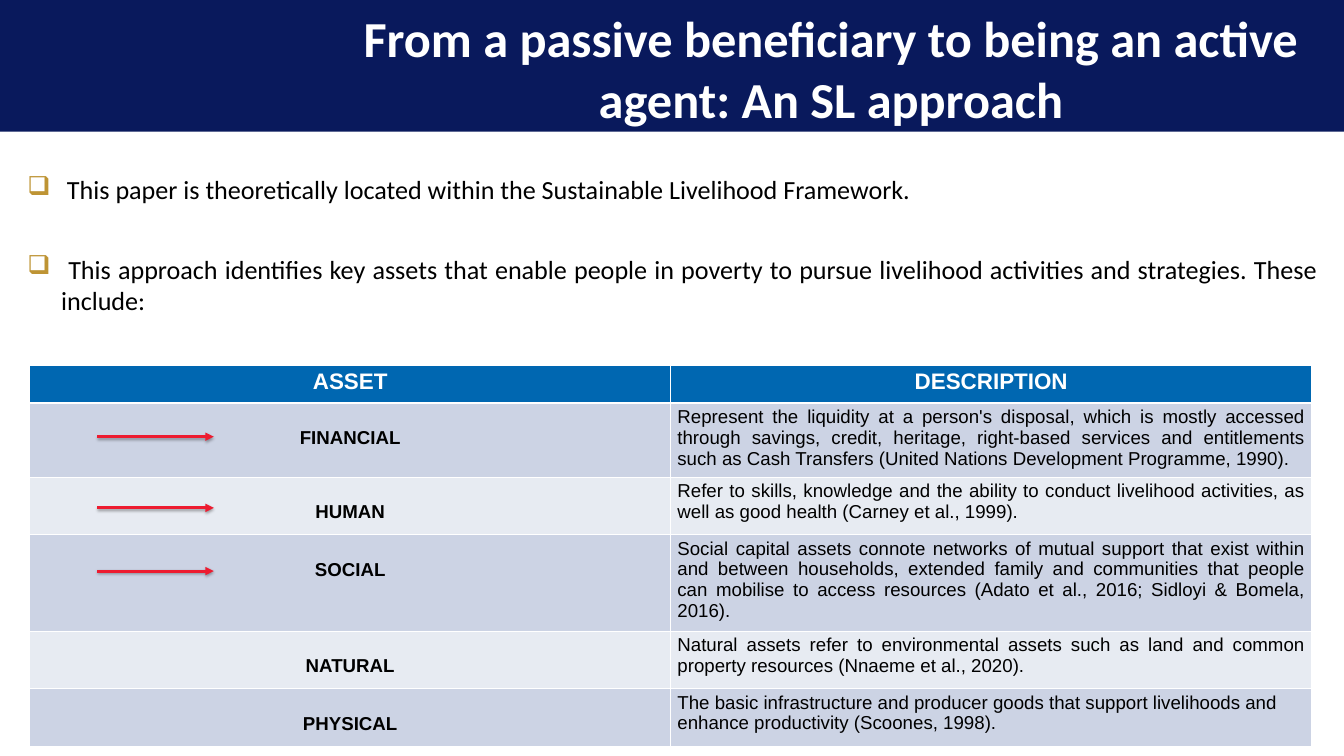
"""Build the slide on livelihood assets in the SL approach."""
from lxml import etree
from pptx import Presentation
from pptx.dml.color import RGBColor
from pptx.enum.shapes import MSO_CONNECTOR, MSO_SHAPE
from pptx.enum.text import MSO_ANCHOR, PP_ALIGN
from pptx.oxml import parse_xml
from pptx.oxml.ns import nsdecls
from pptx.util import Cm, Pt

NAVY = RGBColor(0x09, 0x19, 0x5C)
BLUE = RGBColor(0x00, 0x67, 0xB1)
BAND_DARK = RGBColor(0xCC, 0xD3, 0xE4)
BAND_LIGHT = RGBColor(0xE7, 0xEB, 0xF2)
GOLD = RGBColor(0xBE, 0x94, 0x34)
RED = RGBColor(0xED, 0x1B, 0x30)
WHITE = RGBColor(0xFF, 0xFF, 0xFF)
BLACK = RGBColor(0x00, 0x00, 0x00)

ROWS = [
    ("ASSET", "DESCRIPTION"),
    ("FINANCIAL", "Represent the liquidity at a person's disposal, which is mostly accessed "
     "through savings, credit, heritage, right-based services and entitlements such as Cash "
     "Transfers (United Nations Development Programme, 1990)."),
    ("HUMAN", "Refer to skills, knowledge and the ability to conduct livelihood activities, "
     "as well as good health (Carney et al., 1999)."),
    ("SOCIAL", "Social capital assets connote networks of mutual support that exist within and "
     "between households, extended family and communities that people can mobilise to access "
     "resources (Adato et al., 2016; Sidloyi & Bomela, 2016)."),
    ("NATURAL", "Natural assets refer to environmental assets such as land and common property "
     "resources (Nnaeme et al., 2020)."),
    ("PHYSICAL", "The basic infrastructure and producer goods that support livelihoods and "
     "enhance productivity (Scoones, 1998)."),
]
POINTS = [
    (" This paper is theoretically located within the Sustainable Livelihood Framework.",
     PP_ALIGN.LEFT),
    (" This approach identifies key assets that enable people in poverty to pursue livelihood "
     "activities and strategies. These include:", PP_ALIGN.JUSTIFY),
]


def style(paragraph, font_name, size, color, bold, alignment):
    paragraph.alignment = alignment
    for run in paragraph.runs:
        run.font.name = font_name
        run.font.size = Pt(size)
        run.font.color.rgb = color
        run.font.bold = bold


def set_borders(cell, widths):
    properties = cell._tc.get_or_add_tcPr()
    for index, (side, width) in enumerate(widths.items()):
        properties.insert(index, parse_xml(
            f'<a:ln{side} {nsdecls("a")} w="{Pt(width)}"><a:solidFill>'
            f'<a:srgbClr val="{WHITE}"/></a:solidFill></a:ln{side}>'))


prs = Presentation()
prs.slide_width, prs.slide_height = Cm(50.8), Cm(28.58)
slide = prs.slides.add_slide(prs.slide_layouts[6])

banner = slide.shapes.add_shape(MSO_SHAPE.RECTANGLE, 0, 0, prs.slide_width, Cm(4.98))
banner.shadow.inherit = False
banner.fill.solid()
banner.fill.fore_color.rgb = NAVY
banner.line.fill.background()

points = slide.shapes.add_textbox(Cm(0.79), Cm(6.43), Cm(49.25), Cm(21.16)).text_frame
points.word_wrap = True
points.text = "\n".join(text for text, _ in POINTS)
for paragraph, (_, alignment) in zip(points.paragraphs, POINTS):
    properties = paragraph._p.get_or_add_pPr()
    properties.set("marL", str(Cm(1.27)))
    properties.set("indent", str(-Cm(1.27)))
    properties.append(parse_xml(
        f'<a:buClr {nsdecls("a")}><a:srgbClr val="{GOLD}"/></a:buClr>'))
    properties.append(parse_xml(f'<a:buChar {nsdecls("a")} char="❑"/>'))
    style(paragraph, "Calibri", 28, BLACK, False, alignment)
points.paragraphs[1].space_before = Pt(51.8)

title = slide.shapes.add_textbox(Cm(12.9), Cm(0.97), Cm(37.03), Cm(3.18)).text_frame
title.word_wrap = True
title.vertical_anchor = MSO_ANCHOR.MIDDLE
title.text = "From a passive beneficiary to being an active agent: An SL approach"
style(title.paragraphs[0], "Calibri", 54, WHITE, True, PP_ALIGN.CENTER)

assets = slide.shapes.add_table(
    len(ROWS), 2, Cm(1.12), Cm(13.82), Cm(48.46), Cm(12.32)).table
for column in assets.columns:
    column.width = Cm(24.23)
for row_index, texts in enumerate(ROWS):
    header = row_index == 0
    assets.rows[row_index].height = Cm(1.42 if header else 2.18)
    band = BLUE if header else BAND_DARK if row_index % 2 else BAND_LIGHT
    for column_index, text in enumerate(texts):
        cell = assets.cell(row_index, column_index)
        cell.fill.solid()
        cell.fill.fore_color.rgb = band
        set_borders(cell, {"L": 1, "R": 1, "T": 3 if row_index == 1 else 1,
                           "B": 3 if header else 1})
        cell.text_frame.text = text
        label = header or column_index == 0
        if label and not header:
            cell.margin_top = Cm(0.94)
        last = row_index == len(ROWS) - 1
        alignment = PP_ALIGN.CENTER if label else PP_ALIGN.LEFT if last else PP_ALIGN.JUSTIFY
        style(cell.text_frame.paragraphs[0], "Arial", 24 if header else 20,
              WHITE if header else BLACK, label, alignment)

for arrow_y in (16.51, 19.2, 21.59):
    arrow = slide.shapes.add_connector(
        MSO_CONNECTOR.STRAIGHT, Cm(3.68), Cm(arrow_y), Cm(8.08), Cm(arrow_y))
    arrow.line.color.rgb = RED
    arrow.line.width = Pt(3)
    etree.SubElement(arrow.line._get_or_add_ln(),
                     "{http://schemas.openxmlformats.org/drawingml/2006/main}tailEnd",
                     type="triangle")
    arrow._element.spPr.append(parse_xml(
        f'<a:effectLst {nsdecls("a")}><a:outerShdw blurRad="{Pt(3.1)}" dist="{Pt(1.8)}" '
        f'dir="5400000" rotWithShape="0"><a:srgbClr val="{BLACK}"><a:alpha val="35000"/>'
        '</a:srgbClr></a:outerShdw></a:effectLst>'))

prs.save("out.pptx")
